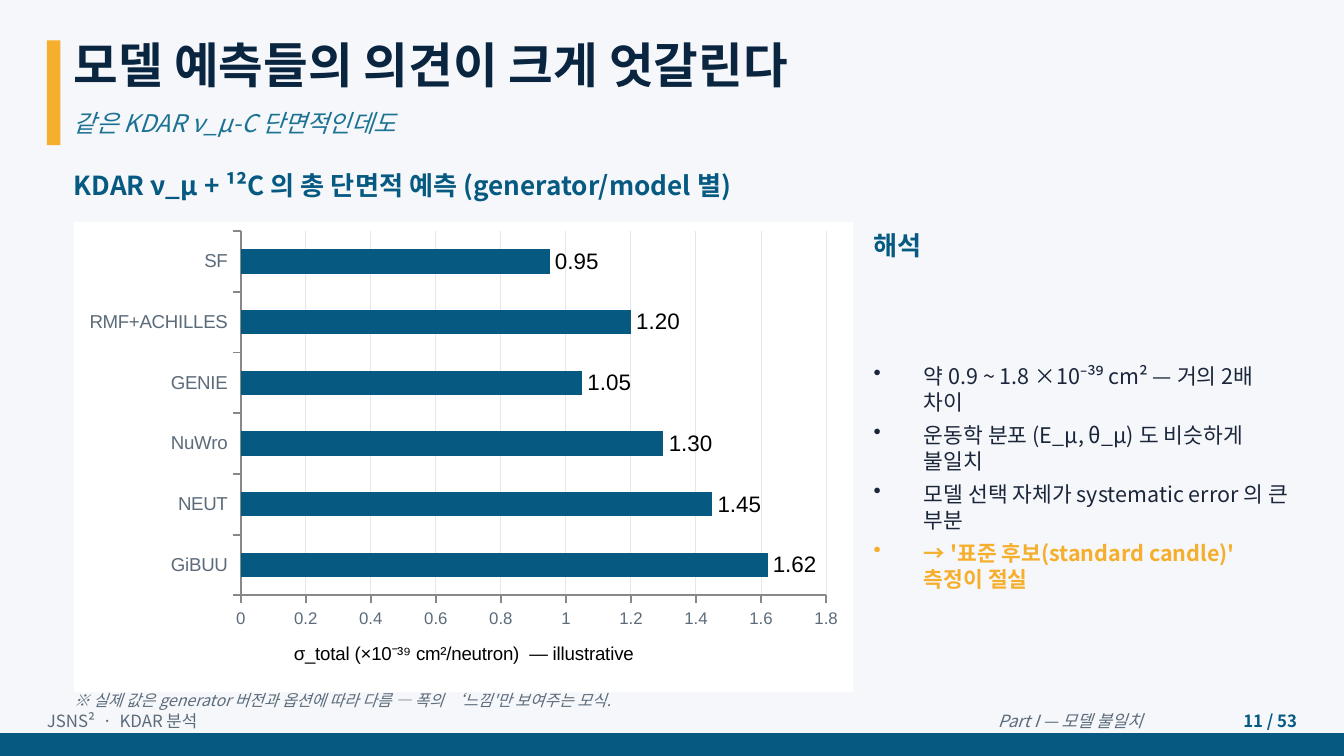
from lxml import etree
from pptx import Presentation
from pptx.chart.data import CategoryChartData
from pptx.dml.color import RGBColor
from pptx.enum.chart import XL_CHART_TYPE, XL_LABEL_POSITION, XL_TICK_LABEL_POSITION, XL_TICK_MARK
from pptx.enum.shapes import MSO_SHAPE
from pptx.enum.text import MSO_ANCHOR, PP_ALIGN
from pptx.oxml import parse_xml
from pptx.oxml.ns import nsdecls, qn
from pptx.util import Inches, Pt

RECT = MSO_SHAPE.RECTANGLE
BAR = XL_CHART_TYPE.BAR_CLUSTERED
OUTER = XL_LABEL_POSITION.OUTSIDE_END
LOW = XL_TICK_LABEL_POSITION.LOW
TICK, NOTICK = XL_TICK_MARK.OUTSIDE, XL_TICK_MARK.NONE
MIDDLE = MSO_ANCHOR.MIDDLE
LEFT, RIGHT = PP_ALIGN.LEFT, PP_ALIGN.RIGHT

FONT = "Noto Sans CJK KR"
NAVY, BLUE, TEAL, GOLD = "0A2540", "065A82", "1C7293", "F6AE2D"
INK, GREY, PALE, WHITE = "1B263B", "5C6B7A", "F5F7FA", "FFFFFF"
AXIS, GRID, BLACK = "888888", "E2E8F0", "000000"

MODELS = {"GiBUU": 1.62, "NEUT": 1.45, "NuWro": 1.3,
          "GENIE": 1.05, "RMF+ACHILLES": 1.2, "SF": 0.95}
POINTS = [
    ("약 0.9 ~ 1.8 ×10⁻³⁹ cm² — 거의 2배 차이", INK, False),
    ("운동학 분포 (E_μ, θ_μ) 도 비슷하게 불일치", INK, False),
    ("모델 선택 자체가 systematic error 의 큰 부분", INK, False),
    ("→ '표준 후보(standard candle)' 측정이 절실", GOLD, True),
]


def color(code):
    """Turn a hex string into a colour."""
    return RGBColor.from_string(code)


def style(font, size, code, name="Arial", bold=False, italic=False):
    """Set the look of a font."""
    font.name, font.size = name, Pt(size)
    font.bold, font.italic = bold, italic
    font.color.rgb = color(code)


def block(slide, x, y, w, h, code):
    """Draw a plain filled bar."""
    bar = slide.shapes.add_shape(RECT, Inches(x), Inches(y), Inches(w), Inches(h))
    bar.shadow.inherit = False
    bar.fill.solid()
    bar.fill.fore_color.rgb = color(code)
    bar.line.fill.background()


def frame(slide, x, y, w, h):
    """Add an empty text box without margins."""
    text = slide.shapes.add_textbox(Inches(x), Inches(y), Inches(w), Inches(h)).text_frame
    text.word_wrap = True
    text.vertical_anchor = MIDDLE
    text.margin_left = text.margin_top = text.margin_right = text.margin_bottom = 0
    return text


def write(para, words, size, code, bold=False, italic=False):
    """Add one run with Latin and East Asian fonts."""
    run = para.add_run()
    run.text = words
    style(run.font, size, code, FONT, bold, italic)
    east = etree.Element(qn("a:ea"), typeface=FONT)
    run.font._element.find(qn("a:latin")).addnext(east)


def label(slide, box, words, size, code, bold=False, italic=False, align=LEFT):
    """Place one line of text."""
    para = frame(slide, *box).paragraphs[0]
    para.alignment = align
    write(para, words, size, code, bold, italic)


def header(slide, x, y, w):
    """Place the accent bar, title and subtitle."""
    block(slide, x, y + 0.08, 0.1, 0.78, GOLD)
    label(slide, (x + 0.2, y, w - 0.2, 0.52), "모델 예측들의 의견이 크게 엇갈린다", 26, NAVY, bold=True)
    label(slide, (x + 0.2, y + 0.52, w - 0.2, 0.34), "같은 KDAR ν_μ-C 단면적인데도", 13, TEAL, italic=True)


def dress(axis, size):
    """Style one chart axis."""
    axis.major_tick_mark, axis.minor_tick_mark = TICK, NOTICK
    axis.tick_label_position = LOW
    style(axis.tick_labels.font, size, GREY)
    axis.format.line.color.rgb = color(AXIS)
    axis.format.line.width = Pt(1)


def graph(slide, x, y, w, h):
    """Place the bar chart of model predictions."""
    data = CategoryChartData()
    data.categories = list(MODELS)
    data.add_series("Series 1", list(MODELS.values()))
    chart = slide.shapes.add_chart(BAR, Inches(x), Inches(y), Inches(w), Inches(h), data).chart
    chart.has_legend = chart.has_title = False
    style(chart.font, 10, BLACK, "Calibri")
    chart._chartSpace.find(qn("c:chart")).addnext(parse_xml(
        f'<c:spPr {nsdecls("c", "a")}><a:solidFill><a:srgbClr val="{WHITE}"/></a:solidFill>'
        '<a:ln><a:noFill/></a:ln></c:spPr>'))
    dress(chart.category_axis, 10)
    chart.category_axis.has_major_gridlines = False
    scale = chart.value_axis
    dress(scale, 9)
    scale.minimum_scale, scale.maximum_scale, scale.major_unit = 0, 1.8, 0.2
    scale.tick_labels.number_format = "General"
    scale.tick_labels.number_format_is_linked = False
    scale.has_major_gridlines = True
    scale.major_gridlines.format.line.color.rgb = color(GRID)
    scale.major_gridlines.format.line.width = Pt(0.5)
    run = scale.axis_title.text_frame.paragraphs[0].add_run()
    run.text = "σ_total (×10⁻³⁹ cm²/neutron)  — illustrative"
    style(run.font, 10, BLACK)
    plot = chart.plots[0]
    plot.gap_width, plot.vary_by_categories = 150, False
    fill = plot.series[0].format.fill
    fill.solid()
    fill.fore_color.rgb = color(BLUE)
    tags = plot.series[0].data_labels
    tags.show_value, tags.position = True, OUTER
    tags.number_format, tags.number_format_is_linked = "0.00", False
    style(tags.font, 12, BLACK)


def study(slide, x, y, w):
    """Place the chart with its heading and note."""
    label(slide, (x, y, 9, 0.35), "KDAR ν_μ + ¹²C 의 총 단면적 예측 (generator/model 별)", 14, BLUE, bold=True)
    graph(slide, x, y + 0.45, w, 3.5)
    label(slide, (x, y + 3.9, w, 0.22),
          "※ 실제 값은 generator 버전과 옵션에 따라 다름 — 폭의 ‘느낌'만 보여주는 모식.", 8.5, GREY, italic=True)


def notes(slide, x, y, w):
    """Place the heading and bullets of the reading."""
    label(slide, (x, y, w, 0.35), "해석", 14, BLUE, bold=True)
    text = frame(slide, x, y + 0.4, w, 3)
    for i, (words, code, bold) in enumerate(POINTS):
        para = text.add_paragraph() if i else text.paragraphs[0]
        props = para._p.get_or_add_pPr()
        props.set("marL", str(Pt(27)))
        props.set("indent", str(-Pt(27)))
        etree.SubElement(props, qn("a:buSzPct"), val="100000")
        etree.SubElement(props, qn("a:buChar"), char="•")
        para.space_after = Pt(4)
        write(para, words, 11.5, code, bold)


def footer(slide, x, y, w):
    """Place the bottom bar and the footer texts."""
    block(slide, x, y + 0.18, w, 0.17, BLUE)
    label(slide, (x + 0.35, y, 5, 0.18), "JSNS²  ·  KDAR 분석", 9, GREY)
    label(slide, (x + 5, y, 3.5, 0.18), "Part I — 모델 불일치", 9, GREY, italic=True, align=RIGHT)
    label(slide, (x + 8.6, y, 1.05, 0.18), "11 / 53", 9, BLUE, bold=True, align=RIGHT)


def main():
    """Build and save the slide."""
    deck = Presentation()
    deck.slide_width = Inches(10)
    deck.slide_height = Inches(10 * 9 / 16)
    slide = deck.slides.add_slide(deck.slide_layouts[6])
    slide.background.fill.solid()
    slide.background.fill.fore_color.rgb = color(PALE)
    header(slide, 0.35, 0.22, 9.3)
    study(slide, 0.55, 1.2, 5.8)
    notes(slide, 6.5, 1.65, 3.1)
    footer(slide, 0, 10 * 9 / 16 - 0.35, 10)
    deck.save("out.pptx")


if __name__ == "__main__":
    main()
